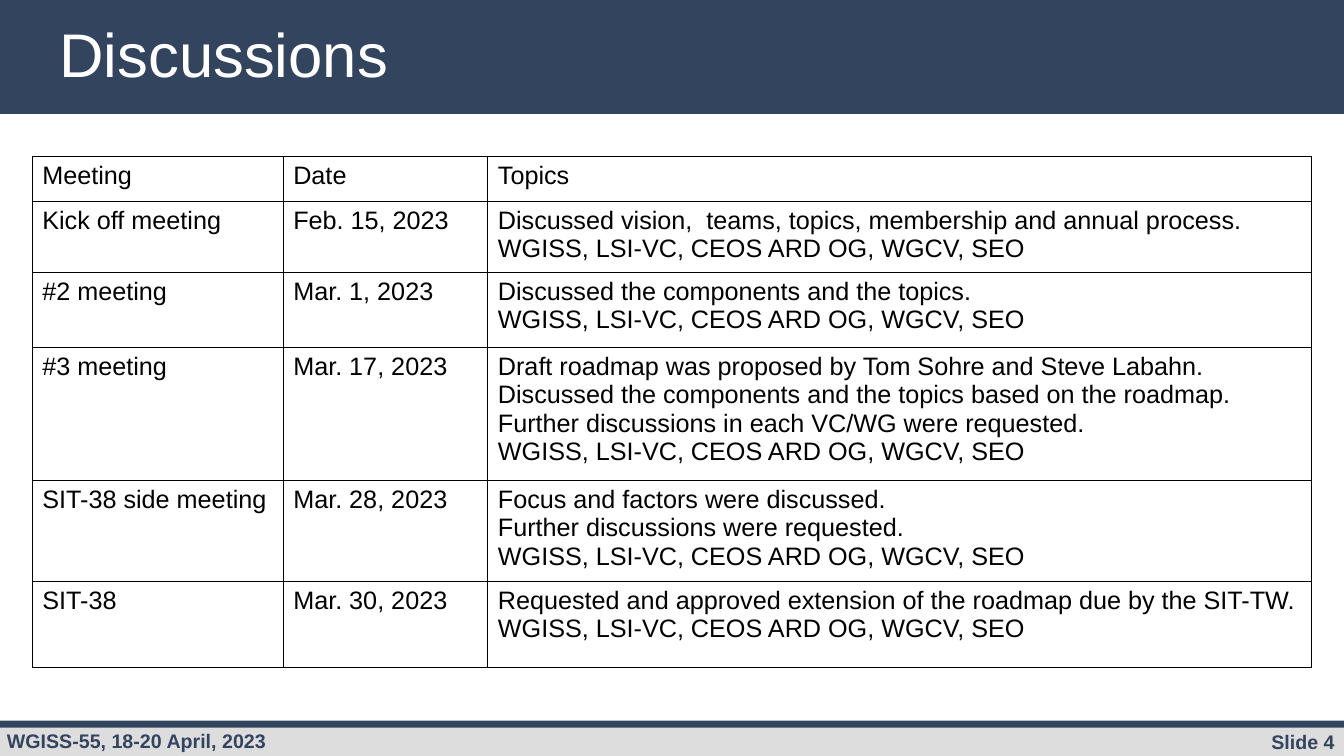
from lxml import etree
from pptx import Presentation
from pptx.dml.color import RGBColor
from pptx.enum.shapes import MSO_SHAPE
from pptx.enum.text import PP_ALIGN
from pptx.oxml.ns import qn
from pptx.util import Inches, Pt

NAVY = RGBColor(0x33, 0x44, 0x5F)
GREY = RGBColor(0xDD, 0xDD, 0xDD)
WHITE = RGBColor(0xFF, 0xFF, 0xFF)
BLACK = RGBColor(0x00, 0x00, 0x00)

RECT = MSO_SHAPE.RECTANGLE
LEFT, RIGHT = PP_ALIGN.LEFT, PP_ALIGN.RIGHT

FONT = "Arial"
CELL = Inches(0.1)  # side of one square of the layout grid
SLIDE_COLS, SLIDE_ROWS = 133.33, 75

TITLE = {"size": Pt(44), "bold": False}
FOOTER = {"size": Pt(14), "bold": True}
BODY = {"size": Pt(18), "bold": False}

ATTENDEES = "WGISS, LSI-VC, CEOS ARD OG, WGCV, SEO"
COL_WIDTHS = [24.9, 20.3, 81.7]
# Row height, meeting, date, topics
MEETINGS = [
    (4.5, "Meeting", "Date", ["Topics"]),
    (7, "Kick off meeting", "Feb. 15, 2023",
     ["Discussed vision,  teams, topics, membership and annual process.", ATTENDEES]),
    (7.5, "#2 meeting", "Mar. 1, 2023",
     ["Discussed the components and the topics.", ATTENDEES]),
    (13.2, "#3 meeting", "Mar. 17, 2023",
     ["Draft roadmap was proposed by Tom Sohre and Steve Labahn.",
      "Discussed the components and the topics based on the roadmap.",
      "Further discussions in each VC/WG were requested.", ATTENDEES]),
    (10, "SIT-38 side meeting", "Mar. 28, 2023",
     ["Focus and factors were discussed.",
      "Further discussions were requested.", ATTENDEES]),
    (8.5, "SIT-38", "Mar. 30, 2023",
     ["Requested and approved extension of the roadmap due by the SIT-TW.", ATTENDEES]),
]


def grid(*squares):
    """Turn counts of grid squares into lengths."""
    return [int(n * CELL) for n in squares]


class SlideBuilder:
    """Holds the current slide and draws each kind of element in its style."""

    def __init__(self, prs):
        self.s = prs.slides.add_slide(prs.slide_layouts[6])

    def fill_text(self, tf, lines, style, color, align=LEFT):
        tf.word_wrap = True
        for i, line in enumerate(lines):
            p = tf.paragraphs[0] if i == 0 else tf.add_paragraph()
            p.alignment = align
            r = p.add_run()
            r.text = line
            for name, value in style.items():
                setattr(r.font, name, value)
            r.font.name = FONT
            r.font.color.rgb = color

    def band(self, top, height, color):
        """Draw a bar across the whole slide."""
        sp = self.s.shapes.add_shape(RECT, *grid(0, top, SLIDE_COLS, height))
        sp.shadow.inherit = False
        sp.fill.solid()
        sp.fill.fore_color.rgb = color
        sp.line.fill.background()

    def text(self, box, line, style, color, align=LEFT):
        sp = self.s.shapes.add_textbox(*grid(*box))
        self.fill_text(sp.text_frame, [line], style, color, align)

    def border(self, cell):
        """Give a cell a thin black line on all four sides."""
        tc_pr = cell._tc.get_or_add_tcPr()
        for i, side in enumerate(("lnL", "lnR", "lnT", "lnB")):
            ln = etree.Element(qn(f"a:{side}"), w=str(Pt(1)))
            fill = etree.SubElement(ln, qn("a:solidFill"))
            etree.SubElement(fill, qn("a:srgbClr"), val=str(BLACK))
            tc_pr.insert(i, ln)

    def table(self, left, top, col_widths, rows):
        heights = [row[0] for row in rows]
        box = grid(left, top, sum(col_widths), sum(heights))
        table = self.s.shapes.add_table(len(rows), len(col_widths), *box).table
        table.first_row = table.horz_banding = False
        for column, width in zip(table.columns, grid(*col_widths)):
            column.width = width
        for row, height, (_, meeting, date, topics) in zip(table.rows, grid(*heights), rows):
            row.height = height
            for cell, lines in zip(row.cells, ([meeting], [date], topics)):
                cell.fill.background()
                self.border(cell)
                self.fill_text(cell.text_frame, lines, BODY, BLACK)


def main():
    prs = Presentation()
    prs.slide_width, prs.slide_height = grid(SLIDE_COLS, SLIDE_ROWS)
    slide = SlideBuilder(prs)
    slide.band(0, 11.3, NAVY)
    slide.band(71.9, 3.1, GREY)
    slide.band(71.5, 0.7, NAVY)
    slide.text((-0.3, 71.8, 53.9, 3.4), "WGISS-55, 18-20 April, 2023", FOOTER, NAVY)
    slide.text((4.9, 1.1, 90.9, 8.4), "Discussions", TITLE, WHITE)
    slide.text((112.3, 71.9, 21.1, 3.4), "Slide 4", FOOTER, NAVY, RIGHT)
    slide.table(3.2, 15.5, COL_WIDTHS, MEETINGS)
    prs.save("out.pptx")


if __name__ == "__main__":
    main()
